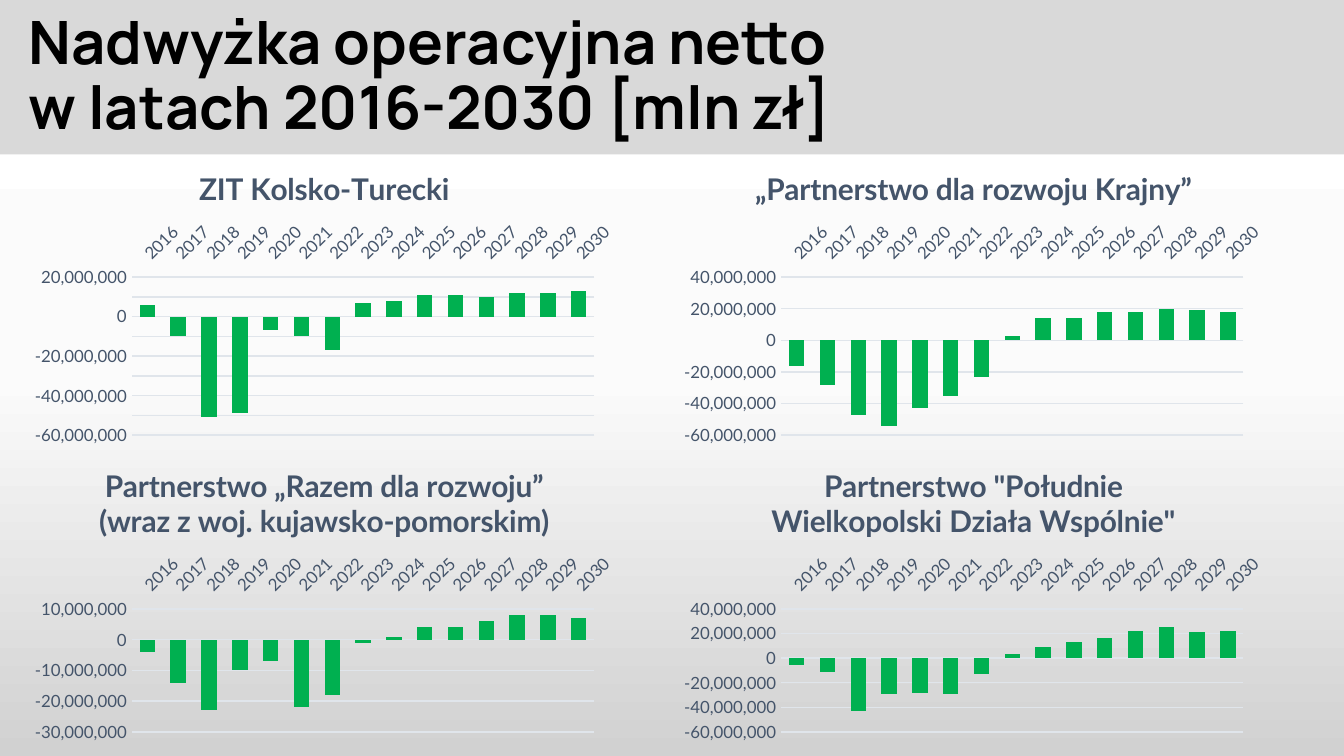
"""Build the slide of net operating surplus charts for four partnerships."""
from pptx import Presentation
from pptx import util as u
from pptx.chart import data
from pptx.dml import color
from pptx.enum import chart as ch, shapes, text
from pptx.oxml import parse_xml, ns

YEARS = [str(y) for y in range(2016, 2031)]
MILLION = 1_000_000
# name, axis minimum, maximum and unit, values in millions
CHARTS = [
    ("ZIT Kolsko-Turecki", (-60, 20, 10),
     [6, -10, -51, -49, -7, -10, -17, 7, 8, 11, 11, 10, 12, 12, 13]),
    ("„Partnerstwo dla rozwoju Krajny”", (-60, 40, 20),
     [-16, -28, -47, -54, -43, -35, -23, 3, 14, 14, 18, 18, 20, 19, 18]),
    ("Partnerstwo „Razem dla rozwoju” (wraz z woj. kujawsko-pomorskim)", (-30, 10, 10),
     [-4, -14, -23, -10, -7, -22, -18, -1, 1, 4, 4, 6, 8, 8, 7]),
    ('Partnerstwo "Południe Wielkopolski Działa Wspólnie"', (-60, 40, 20),
     [-6, -11, -43, -29, -28, -29, -13, 3, 9, 13, 16, 22, 25, 21, 22]),
]


def rgb(value):
    return color.RGBColor.from_string(value)


def apply(obj, values):
    for name, value in values.items():
        setattr(obj, name, value)


class Deck:
    ink, grid, bar, band_fill = "44546A", "E0E5EB", "00B050", "D9D9D9"

    def __init__(self, width, height):
        self.prs = Presentation()
        apply(self.prs, {"slide_width": u.Cm(width), "slide_height": u.Cm(height)})
        self.s = self.prs.slides.add_slide(self.prs.slide_layouts[5])

    def font(self, font, size, fill, name="Lato", bold=False):
        apply(font, {"size": u.Pt(size), "name": name, "bold": bold})
        font.color.rgb = rgb(fill)

    def background(self, stops):
        gs = "".join(f'<a:gs pos="{pos * 1000}"><a:srgbClr val="{c}"/></a:gs>' for pos, c in stops)
        self.s.element.cSld.insert(0, parse_xml(
            f'<p:bg {ns.nsdecls("p", "a")}><p:bgPr><a:gradFill><a:gsLst>{gs}</a:gsLst>'
            '<a:lin ang="5400000" scaled="0"/></a:gradFill><a:effectLst/></p:bgPr></p:bg>'))

    def title(self, words, *box):
        sp = self.s.shapes.title
        apply(sp, dict(zip(("left", "top", "width", "height"), map(u.Cm, box))))
        tf = sp.text_frame
        tf.text = words
        apply(tf, {"word_wrap": True, "auto_size": text.MSO_AUTO_SIZE.NONE,
                   "vertical_anchor": text.MSO_ANCHOR.MIDDLE})
        p = tf.paragraphs[0]
        apply(p, {"alignment": text.PP_ALIGN.LEFT, "line_spacing": 0.9})
        for r in p.runs:
            self.font(r.font, 32, "000000", "Manrope", True)

    def band(self, *box):
        sp = self.s.shapes.add_shape(shapes.MSO_SHAPE.RECTANGLE, *map(u.Cm, box))
        sp.shadow.inherit = False
        sp.fill.solid()
        sp.fill.fore_color.rgb = rgb(self.band_fill)
        sp.line.fill.background()
        self.s.shapes.title.element.addprevious(sp.element)

    def line(self, line):
        line.color.rgb = rgb(self.grid)
        line.width = u.Pt(0.75)

    def chart(self, name, scale, values, *box):
        cd = data.CategoryChartData(number_format="#,##0")
        cd.categories = YEARS
        cd.add_series(name, [v * MILLION for v in values])
        chart = self.s.shapes.add_chart(
            ch.XL_CHART_TYPE.COLUMN_CLUSTERED, *map(u.Cm, box), cd).chart
        self.font(chart.font, 10, "000000")
        apply(chart, {"has_legend": False, "has_title": True})
        tf = chart.chart_title.text_frame
        tf.text = name
        self.font(tf.paragraphs[0].runs[0].font, 16, self.ink, bold=True)
        chart.chart_title.include_in_layout = False

        plot = chart.plots[0]
        apply(plot, {"gap_width": 100, "overlap": -24, "vary_by_categories": False})
        series = plot.series[0]
        series.invert_if_negative = False
        series.format.fill.solid()
        series.format.fill.fore_color.rgb = rgb(self.bar)

        cat, val = chart.category_axis, chart.value_axis
        for axis in (cat, val):
            apply(axis, {"major_tick_mark": ch.XL_TICK_MARK.NONE,
                         "minor_tick_mark": ch.XL_TICK_MARK.NONE})
            self.font(axis.tick_labels.font, 9, self.ink)
        cat.tick_label_position = ch.XL_TICK_LABEL_POSITION.HIGH
        cat.tick_labels.font._element.getparent().getparent().getparent().bodyPr.set("rot", "-2700000")
        self.line(cat.format.line)
        low, high, unit = (v * MILLION for v in scale)
        apply(val, {"minimum_scale": low, "maximum_scale": high, "major_unit": unit,
                    "has_major_gridlines": True})
        apply(val.tick_labels, {"number_format": "#,##0", "number_format_is_linked": False})
        val.format.line.fill.background()
        self.line(val.major_gridlines.format.line)


def main():
    deck = Deck(25.4, 14.29)
    deck.background([(0, "FFFFFF"), (50, "FBFBFB"), (100, "D1D1D1")])
    deck.band(-0.05, -0.03, 25.45, 2.95)
    deck.title("Nadwyżka operacyjna netto\vw latach 2016-2030 [mln zł]", 0.28, 0.08, 21.89, 2.77)
    for i, (name, scale, values) in enumerate(CHARTS):
        row, col = divmod(i, 2)
        deck.chart(name, scale, values, 0.43 + col * 12.27, 2.82 + row * 5.61, 11.4, 5.72)
    deck.prs.save("out.pptx")


if __name__ == "__main__":
    main()
